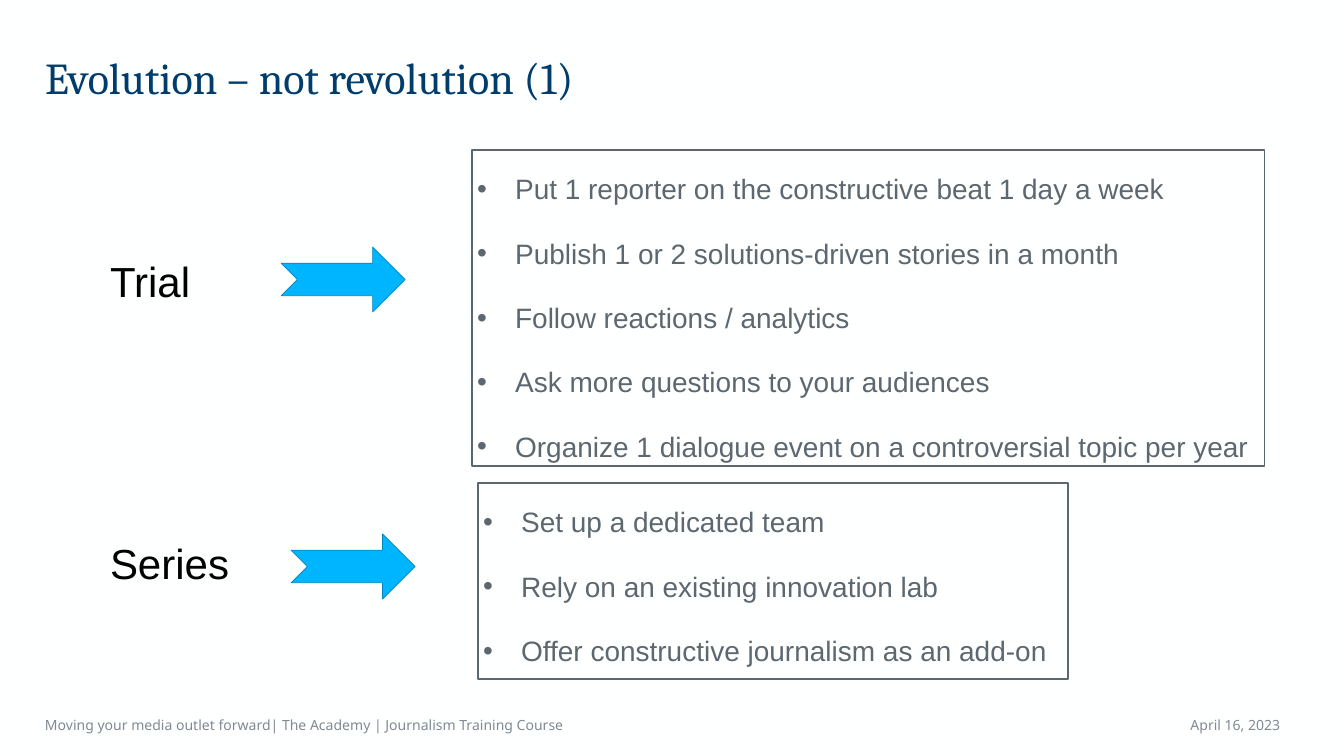
from pptx import Presentation
from pptx.dml.color import RGBColor
from pptx.enum.shapes import MSO_SHAPE as Kind
from pptx.enum.text import MSO_ANCHOR as Anchor, MSO_AUTO_SIZE as Fit, PP_ALIGN as Align
from pptx.oxml.ns import qn
from pptx.util import Inches, Pt
from lxml.etree import SubElement

TITLE = "Evolution – not revolution (1)"
# label, label place, arrow place, box place, points
STEPS = [
    ("Trial", (105, 253, 109, 117), (281, 247, 124, 65), (472, 150, 792, 316), [
        "Put 1 reporter on the constructive beat 1 day a week",
        "Publish 1 or 2 solutions-driven stories in a month",
        "Follow reactions / analytics",
        "Ask more questions to your audiences",
        "Organize 1 dialogue event on a controversial topic per year",
    ]),
    ("Series", (105, 535, 147, 117), (291, 534, 124, 65), (478, 483, 590, 196), [
        "Set up a dedicated team",
        "Rely on an existing innovation lab",
        "Offer constructive journalism as an add-on",
    ]),
]
FOOT = [
    ("Moving your media outlet forward| The Academy | Journalism Training Course",
     (40, 709, 786, 32), Align.LEFT),
    ("April 16, 2023", (1047, 709, 238, 32), Align.RIGHT),
]
THEME = {
    "back": "FEFFFF", "arrow": "00B5FF", "edge": "0086BD", "frame": "5D676F",
    "title": ("Cambria", 63, "003D6D"),
    "point": ("Arial", 40, "5D676F"),
    "label": ("Arial", 60, "000000"),
    "foot": ("Noto Sans", 20, "808A93"),
}
SCALE = Inches(1) / 50.4
INSET, INDENT = 5, 38


def px(n):
    return round(n * SCALE)


def color(name):
    return RGBColor.from_string(name)


def place(shape, spot):
    shape.left, shape.top, shape.width, shape.height = map(px, spot)


def frame(shape, anchor=Anchor.TOP, wrap=True):
    text = shape.text_frame
    text.auto_size = Fit.NONE
    text.word_wrap = wrap
    text.vertical_anchor = anchor
    text.margin_left = text.margin_right = px(INSET)
    return text


def write(para, text, style, align=Align.LEFT):
    para.alignment = align
    run = para.add_run()
    run.text = text
    face, size, tone = THEME[style]
    run.font.name, run.font.size = face, Pt(size)
    run.font.color.rgb = color(tone)


def bullet(para):
    props = para._p.get_or_add_pPr()
    props.set("marL", str(px(INDENT)))
    props.set("indent", str(-px(INDENT)))
    SubElement(props, qn("a:buFont"), typeface="Arial")
    SubElement(props, qn("a:buChar"), char="•")


def fill_box(box, points):
    box.line.color.rgb = color(THEME["frame"])
    box.line.width = Pt(2.25)
    text = frame(box)
    text.margin_top = text.margin_bottom = px(INSET)
    for i, point in enumerate(points):
        para = text.add_paragraph() if i else text.paragraphs[0]
        para.line_spacing, para.space_before = 1.5, Pt(20)
        bullet(para)
        write(para, point, "point")


def add_arrow(shapes, spot):
    arrow = shapes.add_shape(Kind.NOTCHED_RIGHT_ARROW, *map(px, spot))
    arrow.shadow.inherit = False
    arrow.fill.solid()
    arrow.fill.fore_color.rgb = color(THEME["arrow"])
    arrow.line.color.rgb = color(THEME["edge"])
    arrow.line.width = Pt(1)


def main():
    deck = Presentation()
    deck.slide_width, deck.slide_height = Inches(26.66), Inches(15)
    slide = deck.slides.add_slide(deck.slide_layouts[1])
    shapes = slide.shapes
    slide.background.fill.solid()
    slide.background.fill.fore_color.rgb = color(THEME["back"])

    title = shapes.title
    place(title, (40, 40, 1245, 64))
    text = frame(title)
    text.margin_top = text.margin_bottom = 0
    text.paragraphs[0].line_spacing = Pt(91)
    write(text.paragraphs[0], TITLE, "title")

    body = slide.placeholders[1]
    for i, (label, spot, arrow, area, points) in enumerate(STEPS):
        box = shapes.add_textbox(0, 0, 0, 0) if i else body
        place(box, area)
        fill_box(box, points)
        add_arrow(shapes, arrow)
        tag = shapes.add_textbox(*map(px, spot))
        write(frame(tag, wrap=False).paragraphs[0], label, "label")

    for words, spot, align in FOOT:
        note = shapes.add_textbox(*map(px, spot))
        write(frame(note, Anchor.MIDDLE).paragraphs[0], words, "foot", align)

    deck.save("out.pptx")


if __name__ == "__main__":
    main()
